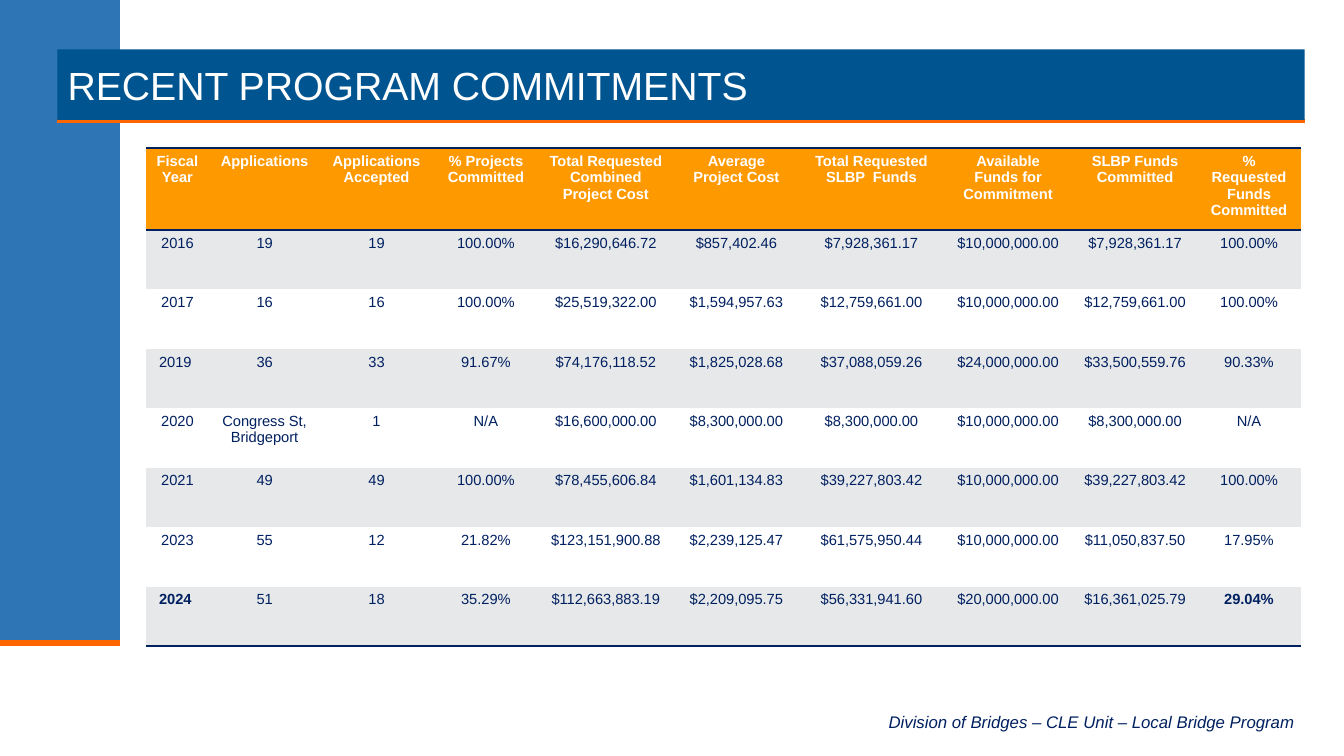
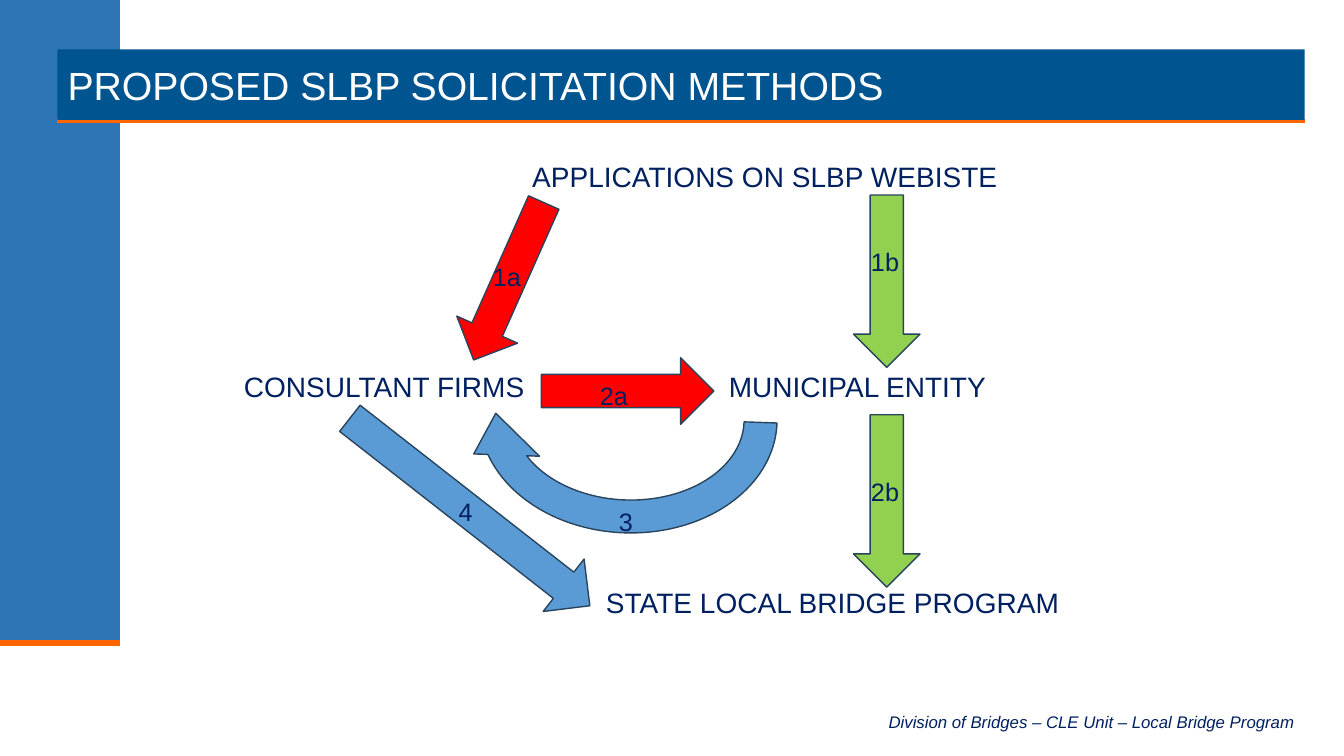
from dataclasses import dataclass

from pptx import Presentation
from pptx.dml.color import RGBColor
from pptx.enum.shapes import MSO_CONNECTOR, MSO_SHAPE
from pptx.enum.text import MSO_ANCHOR, MSO_AUTO_SIZE, PP_ALIGN
from pptx.oxml.ns import qn
from pptx.util import Inches, Pt
from lxml.etree import SubElement


@dataclass(frozen=True)
class Theme:
    font: str = "Arial"
    side_band: str = "2E75B6"
    title_band: str = "005490"
    accent: str = "FF6600"
    navy: str = "002060"
    white: str = "FFFFFF"
    header: str = "FF9900"
    stripe: str = "E7E8EA"
    consultant: str = "FF0000"
    municipal: str = "92D050"
    agreement: str = "5B9BD5"
    outline: str = "28445D"
    title_size: float = 28
    entity_size: float = 20
    step_size: float = 18
    footer_size: float = 12
    table_size: float = 10.5


THEME = Theme()
PLAIN_TABLE_STYLE = "{2D5ABB26-0587-4C30-8999-92F81FD0307C}"
FOOTER = "Division of Bridges – CLE Unit – Local Bridge Program"

COLUMN_WIDTHS = [0.62, 1.11, 1.11, 1.06, 1.32, 1.27, 1.41, 1.3, 1.22, 1.04]
HEADER_HEIGHT, ROW_HEIGHT = 0.81, 0.59
HEADINGS = [
    "Fiscal Year", "Applications", "Applications Accepted",
    "% Projects Committed", "Total Requested Combined Project Cost",
    "Average Project Cost", "Total Requested SLBP  Funds",
    "Available Funds for Commitment", "SLBP Funds Committed",
    "% Requested Funds Committed",
]
COMMITMENTS = [
    ["2016", "19", "19", "100.00%", "$16,290,646.72", "$857,402.46",
     "$7,928,361.17", "$10,000,000.00", "$7,928,361.17", "100.00%"],
    ["2017", "16", "16", "100.00%", "$25,519,322.00", "$1,594,957.63",
     "$12,759,661.00", "$10,000,000.00", "$12,759,661.00", "100.00%"],
    ["2019 ", "36", "33", "91.67%", "$74,176,118.52", "$1,825,028.68",
     "$37,088,059.26", "$24,000,000.00", "$33,500,559.76", "90.33%"],
    ["2020", "Congress St, Bridgeport", "1", "N/A", "$16,600,000.00",
     "$8,300,000.00", "$8,300,000.00", "$10,000,000.00", "$8,300,000.00",
     "N/A"],
    ["2021", "49", "49", "100.00%", "$78,455,606.84", "$1,601,134.83",
     "$39,227,803.42", "$10,000,000.00", "$39,227,803.42", "100.00%"],
    ["2023", "55", "12", "21.82%", "$123,151,900.88", "$2,239,125.47",
     "$61,575,950.44", "$10,000,000.00", "$11,050,837.50", "17.95%"],
    ["2024 ", "51", "18", "35.29%", "$112,663,883.19", "$2,209,095.75",
     "$56,331,941.60", "$20,000,000.00", "$16,361,025.79", "29.04%"],
]
EMPHASIZED = {"2024 ", "29.04%"}

ENTITIES = [
    ("APPLICATIONS ON SLBP WEBISTE", 5.18, 1.57, 4.9),
    ("CONSULTANT FIRMS", 2.32, 3.65, 3.04),
    ("MUNICIPAL ENTITY", 7.13, 3.65, 3.04),
]
# left, top, length, rotation, colour
STEP_ARROWS = [
    (7.94, 2.46, 1.71, 90, THEME.municipal),
    (4.19, 2.46, 1.71, 114, THEME.consultant),
    (5.37, 3.55, 1.71, 0, THEME.consultant),
    (3.15, 4.75, 3.02, 38, THEME.agreement),
    (7.94, 4.64, 1.71, 90, THEME.municipal),
]
STEP_LABELS = [
    ("1b", 8.54, 2.39), ("2b", 8.54, 4.68), ("3", 6.04, 4.97),
    ("2a", 5.85, 3.72), ("1a", 4.79, 2.54), ("4", 4.45, 4.87),
]


def rgb(color):
    return RGBColor.from_string(color)


def box(*lengths):
    return [Inches(length) for length in lengths]


def place(shape, left, top, width, height):
    shape.left, shape.top, shape.width, shape.height = box(
        left, top, width, height)


def set_fill(target, color):
    target.fill.solid()
    target.fill.fore_color.rgb = rgb(color)


def style_text(paragraph, size, color, bold=False, italic=False,
               align=PP_ALIGN.LEFT):
    paragraph.alignment = align
    font = paragraph.font
    font.name, font.size, font.color.rgb = THEME.font, Pt(size), rgb(color)
    font.bold, font.italic = bold, italic


def add_text(slide, text, bounds, size, **style):
    frame = slide.shapes.add_textbox(*box(*bounds)).text_frame
    frame.word_wrap = True
    frame.text = text
    style_text(frame.paragraphs[0], size, THEME.navy, **style)
    return frame


def add_block(slide, preset, bounds, color, outline=None, rotation=0):
    block = slide.shapes.add_shape(preset, *box(*bounds))
    block.shadow.inherit = False
    block.rotation = rotation
    set_fill(block, color)
    if outline:
        block.line.color.rgb = rgb(outline)
        block.line.width = Pt(1)
    else:
        block.line.fill.background()
    return block


def add_rule(slide, left, right, y, weight):
    rule = slide.shapes.add_connector(
        MSO_CONNECTOR.STRAIGHT, *box(left, y, right, y))
    rule.line.color.rgb = rgb(THEME.accent)
    rule.line.width = Pt(weight)
    SubElement(rule.element.spPr, qn("a:effectLst"))
    return rule


def move_to_master(master, shapes):
    """Put the shapes behind the master's placeholders, with ids of their own."""
    tree = master.shapes.element
    for index, shape in enumerate(shapes):
        shape.element.xpath(".//p:cNvPr")[0].set("id", str(100 + index))
        tree.insert(2 + index, shape.element)


def add_master_bands(prs, slide):
    move_to_master(prs.slide_master, [
        add_block(slide, MSO_SHAPE.RECTANGLE, (0, 0, 1.19, 6.38),
                  THEME.side_band),
        add_rule(slide, 0, 1.19, 6.38, 4.5),
        add_rule(slide, 0.57, 12.94, 1.2, 2.25),
    ])


def add_slide(prs, layout, title):
    """Add a slide with the title band and the footer line."""
    slide = prs.slides.add_slide(prs.slide_layouts.get_by_name(layout))
    band = slide.shapes.title
    place(band, 0.57, 0.49, 12.37, 0.7)
    set_fill(band, THEME.title_band)
    frame = band.text_frame
    frame.text = title
    frame.vertical_anchor = MSO_ANCHOR.MIDDLE
    frame.auto_size = MSO_AUTO_SIZE.NONE
    style_text(frame.paragraphs[0], THEME.title_size, THEME.white)
    add_text(slide, FOOTER, (1.92, 7.01, 11.02, 0.34), THEME.footer_size,
             italic=True, align=PP_ALIGN.RIGHT)
    return slide


def add_cell_border(cell, side):
    border = SubElement(cell._tc.get_or_add_tcPr(), qn(f"a:{side}"),
                        w=str(Pt(2)))
    solid = SubElement(border, qn("a:solidFill"))
    SubElement(solid, qn("a:srgbClr"), val=THEME.navy)


def fill_cell(cell, text, fill, color, bold, borders):
    for side in borders:
        add_cell_border(cell, side)
    set_fill(cell, fill)
    cell.text = text
    style_text(cell.text_frame.paragraphs[0], THEME.table_size, color,
               bold=bold, align=PP_ALIGN.CENTER)


def add_commitments_table(slide):
    rows = [HEADINGS] + COMMITMENTS
    last = len(rows) - 1
    table = slide.shapes.add_table(
        len(rows), len(HEADINGS),
        *box(1.45, 1.47, sum(COLUMN_WIDTHS),
             HEADER_HEIGHT + last * ROW_HEIGHT)).table
    table._tbl.tblPr.find(qn("a:tableStyleId")).text = PLAIN_TABLE_STYLE
    for column, width in zip(table.columns, COLUMN_WIDTHS):
        column.width = Inches(width)
    for r, values in enumerate(rows):
        header = r == 0
        table.rows[r].height = Inches(HEADER_HEIGHT if header else ROW_HEIGHT)
        if header:
            fill, color, borders = THEME.header, THEME.white, ("lnT", "lnB")
        else:
            fill = THEME.stripe if r % 2 else THEME.white
            color = THEME.navy
            borders = ("lnB",) if r == last else ()
        for c, text in enumerate(values):
            fill_cell(table.cell(r, c), text, fill, color,
                      header or text in EMPHASIZED, borders)


def set_entity_spacing(paragraph):
    paragraph.line_spacing = 0.9
    paragraph.space_before = Pt(0)


def fill_program_body(slide):
    body = slide.placeholders[1]
    place(body, 5.91, 5.8, 4.9, 0.47)
    frame = body.text_frame
    frame.text = "STATE LOCAL BRIDGE PROGRAM"
    frame.auto_size = MSO_AUTO_SIZE.NONE
    paragraph = frame.paragraphs[0]
    set_entity_spacing(paragraph)
    properties = paragraph._p.get_or_add_pPr()
    properties.set("marL", "0")
    properties.set("indent", "0")
    SubElement(properties, qn("a:buNone"))
    style_text(paragraph, THEME.entity_size, THEME.navy)


def add_solicitation_flow(slide):
    fill_program_body(slide)
    for text, left, top, width in ENTITIES:
        frame = add_text(slide, text, (left, top, width, 0.47),
                         THEME.entity_size)
        set_entity_spacing(frame.paragraphs[0])
    add_block(slide, MSO_SHAPE.CIRCULAR_ARROW, (4.59, 2.84, 3.28, 2.61),
              THEME.agreement, THEME.outline, 182)
    for left, top, length, rotation, color in STEP_ARROWS:
        add_block(slide, MSO_SHAPE.RIGHT_ARROW, (left, top, length, 0.66),
                  color, THEME.outline, rotation)
    for text, left, top in STEP_LABELS:
        frame = add_text(slide, text, (left, top, 0.48, 0.4),
                         THEME.step_size)
        frame.margin_right = 0


def main():
    prs = Presentation()
    prs.slide_width, prs.slide_height = box(13.33, 7.5)
    commitments = add_slide(prs, "Title Only", "RECENT PROGRAM COMMITMENTS")
    add_master_bands(prs, commitments)
    add_commitments_table(commitments)
    methods = add_slide(prs, "Title and Content",
                        "PROPOSED SLBP SOLICITATION METHODS")
    add_solicitation_flow(methods)
    prs.save("out.pptx")


if __name__ == "__main__":
    main()
